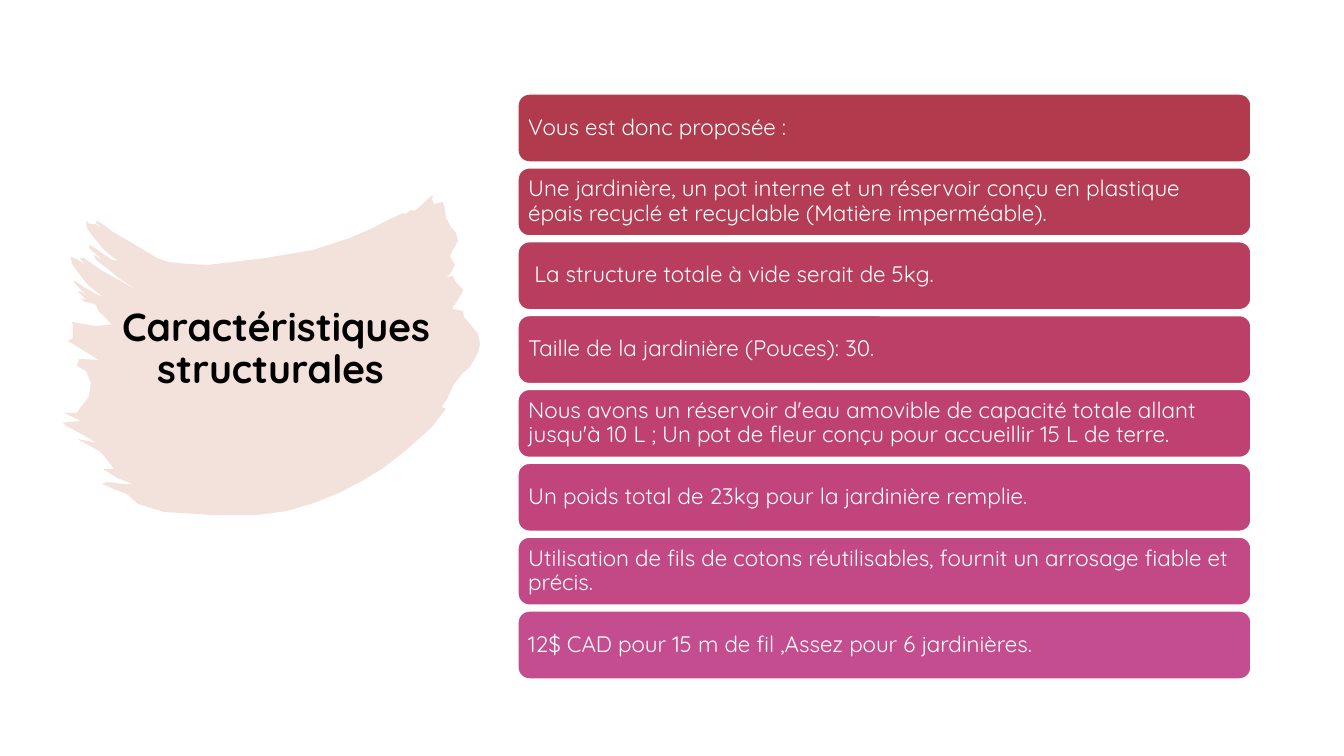
import pptx
import pptx.dml.color
import pptx.enum.shapes
import pptx.enum.text
import pptx.oxml
import pptx.oxml.ns
import pptx.util
from lxml import etree

RGBColor = pptx.dml.color.RGBColor
WHITE = RGBColor(0xFF, 0xFF, 0xFF)
BLACK = RGBColor(0x00, 0x00, 0x00)
TERRACOTTA = RGBColor(0xC3, 0x6D, 0x4D)

SLIDE_WIDTH, SLIDE_HEIGHT = 1344, 756
EMU_PER_PX = 12192000 / SLIDE_WIDTH
FONT = "Quicksand"

FEATURES = [
    ("Vous est donc proposée :", RGBColor(0xB1, 0x3B, 0x4C)),
    ("Une jardinière, un pot interne et un réservoir conçu en plastique épais "
     "recyclé et recyclable (Matière imperméable).", RGBColor(0xB5, 0x3C, 0x55)),
    (" La structure totale à vide serait de 5kg.", RGBColor(0xB9, 0x3E, 0x5E)),
    ("Taille de la jardinière (Pouces): 30.", RGBColor(0xBC, 0x3F, 0x67)),
    ("Nous avons un réservoir d'eau amovible de capacité totale allant "
     "jusqu'à 10 L ; Un pot de fleur conçu pour accueillir 15 L de terre.",
     RGBColor(0xBF, 0x41, 0x71)),
    ("Un poids total de 23kg pour la jardinière remplie.", RGBColor(0xC1, 0x45, 0x7C)),
    ("Utilisation de fils de cotons réutilisables, fournit un arrosage fiable "
     "et précis. ", RGBColor(0xC2, 0x49, 0x85)),
    ("12$ CAD pour 15 m de fil ,Assez pour 6 jardinières. ",
     RGBColor(0xC3, 0x4D, 0x8F)),
]

BRUSH_RIGHT_EDGE = [
    (370, 0), (369, 3), (371, 8), (380, 6), (382, 14), (383, 22), (388, 31),
    (393, 37), (395, 45), (391, 52), (388, 58), (387, 60), (392, 69), (387, 78),
    (383, 81), (390, 80), (392, 85), (400, 94), (399, 97), (389, 113), (400, 115),
    (401, 121), (407, 128), (415, 138), (417, 148), (415, 157), (407, 171),
    (400, 177), (391, 188), (384, 203), (379, 211), (383, 213), (376, 222),
]
BRUSH_BOTTOM = [
    (368, 232), (359, 240), (349, 249), (336, 260), (319, 273), (299, 285),
    (276, 297), (251, 307), (224, 315), (194, 319), (150, 319), (101, 316),
    (75, 308), (65, 299), (61, 297), (53, 294),
]
BRUSH_LEFT_EDGE = [
    (39, 288), (44, 286), (59, 288), (70, 288), (54, 282), (40, 273), (51, 273),
    (41, 260), (36, 255), (14, 243), (34, 247), (13, 235), (3, 230), (0, 227),
    (5, 226), (18, 225), (1, 217), (14, 217), (17, 212), (23, 205), (26, 200),
    (28, 187), (23, 175), (14, 170), (16, 163), (36, 164), (5, 145), (10, 142),
    (10, 130), (9, 126), (32, 130), (49, 129), (40, 119), (36, 116), (33, 109),
    (28, 107), (22, 106), (18, 103), (23, 103), (15, 96), (17, 95), (27, 101),
    (18, 94), (11, 86), (12, 85), (22, 92), (35, 99), (40, 101), (25, 89),
    (14, 75), (9, 68), (8, 61), (14, 63), (22, 69), (17, 62), (21, 62),
    (28, 67), (38, 74), (70, 92), (83, 98), (74, 94), (54, 81), (50, 77),
    (33, 64), (31, 59), (41, 65), (26, 52), (27, 49), (36, 55), (49, 64),
    (55, 65), (41, 54), (28, 38), (24, 32), (23, 25), (27, 28), (32, 28),
    (40, 33), (33, 27), (34, 25), (38, 27), (50, 36), (64, 44),
]
BRUSH_TOP = [
    (94, 62), (105, 66), (125, 68), (145, 69), (170, 66), (203, 62), (250, 54),
    (287, 42), (312, 31), (323, 25), (340, 17), (343, 18), (346, 15), (349, 14),
    (352, 15), (362, 6), (368, 0),
]


def px(length):
    return pptx.util.Emu(round(length * EMU_PER_PX))


def write_text(shape, text, size, color, margins, align, bold=False):
    frame = shape.text_frame
    frame.word_wrap = True
    frame.vertical_anchor = pptx.enum.text.MSO_ANCHOR.MIDDLE
    (frame.margin_left, frame.margin_top,
     frame.margin_right, frame.margin_bottom) = map(px, margins)
    para = frame.paragraphs[0]
    para.text = text
    para.alignment = align
    para.line_spacing = 0.9
    para.font.name = FONT
    para.font.size = pptx.util.Pt(size)
    para.font.bold = bold
    para.font.color.rgb = color


def add_brush(page, left, top):
    outline = BRUSH_RIGHT_EDGE + BRUSH_BOTTOM + BRUSH_LEFT_EDGE + BRUSH_TOP
    start, *rest = outline
    builder = page.shapes.build_freeform(*start, scale=EMU_PER_PX)
    builder.add_line_segments(rest, close=True)
    brush = builder.convert_to_shape(px(left), px(top))
    brush.shadow.inherit = False
    brush.fill.solid()
    brush.fill.fore_color.rgb = TERRACOTTA
    brush.line.fill.background()
    tint = brush.fill._xPr.find(".//" + pptx.oxml.ns.qn("a:srgbClr"))
    etree.SubElement(tint, pptx.oxml.ns.qn("a:alpha"), val="20000")


def add_title(page, left, top, width, height):
    box = page.shapes.add_textbox(px(left), px(top), px(width), px(height))
    write_text(box, "Caractéristiques structurales ", 28, BLACK, (10, 5, 10, 48),
               pptx.enum.text.PP_ALIGN.CENTER, bold=True)


def add_features(page, left, top, width, height):
    row_height = 68
    pitch = (height - row_height) / (len(FEATURES) - 1)
    for index, (text, color) in enumerate(FEATURES):
        row = page.shapes.add_shape(
            pptx.enum.shapes.MSO_SHAPE.ROUNDED_RECTANGLE,
            px(left), px(top + index * pitch), px(width), px(row_height))
        row.shadow.inherit = False
        row.fill.solid()
        row.fill.fore_color.rgb = color
        row.line.color.rgb = WHITE
        row.line.width = pptx.util.Pt(1)
        write_text(row, text, 16, WHITE, (7, 4, 7, 4),
                   pptx.enum.text.PP_ALIGN.LEFT)


def main():
    deck = pptx.Presentation()
    deck.slide_width = px(SLIDE_WIDTH)
    deck.slide_height = px(SLIDE_HEIGHT)
    page = deck.slides.add_slide(deck.slide_layouts[6])
    page.background.fill.solid()
    page.background.fill.fore_color.rgb = WHITE
    add_brush(page, 63, 196)
    add_title(page, 110, 289, 332, 165)
    add_features(page, 518, 94, 733, 585)
    deck.save("out.pptx")


if __name__ == "__main__":
    main()
